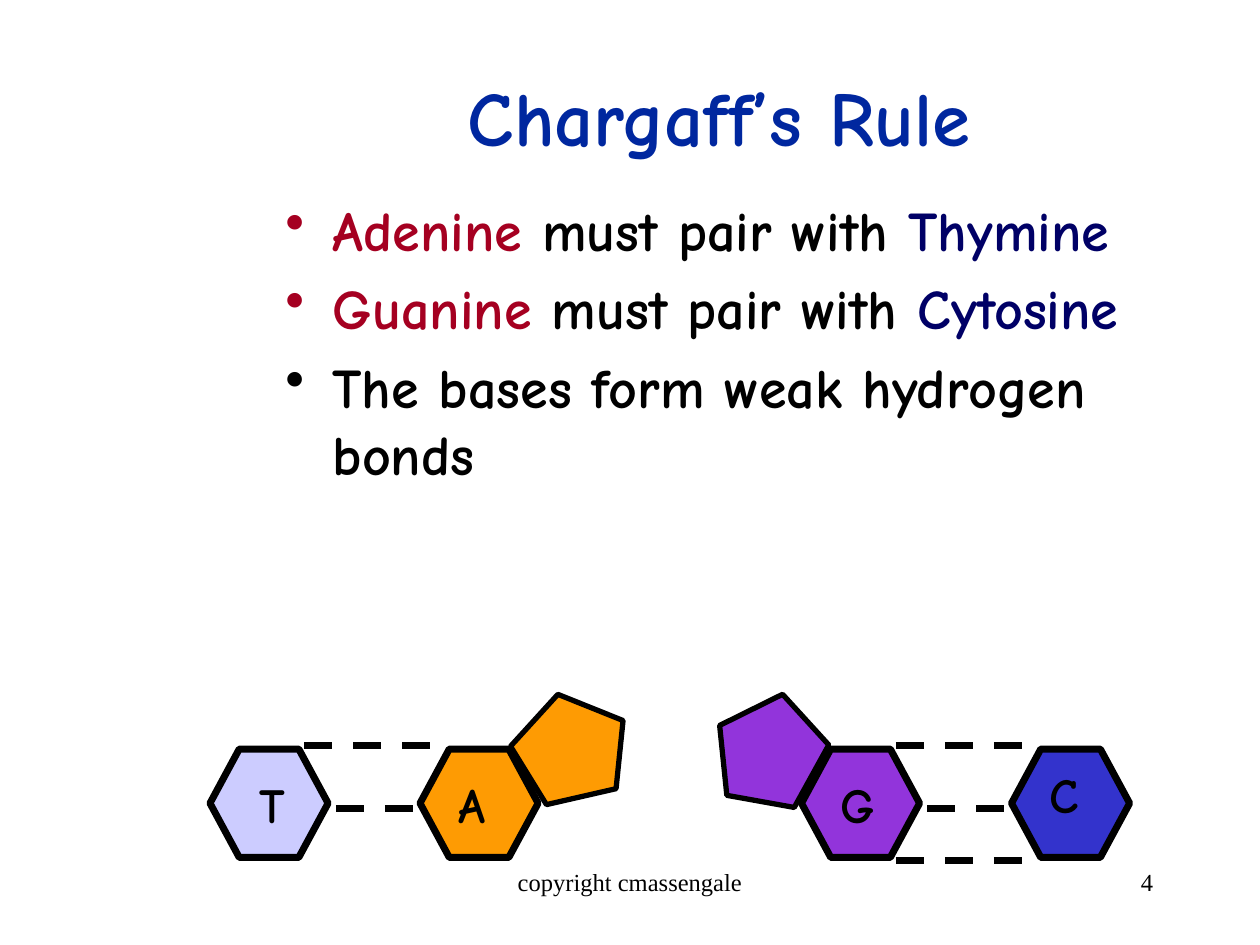
import dataclasses
import typing

import lxml.etree
import pptx
import pptx.dml.color
import pptx.enum.dml
import pptx.enum.shapes
import pptx.enum.text
import pptx.oxml.ns
import pptx.util

Pt = pptx.util.Pt
ALIGN = pptx.enum.text.PP_ALIGN
ANCHOR = pptx.enum.text.MSO_ANCHOR
SHAPES = pptx.enum.shapes.MSO_SHAPE


@dataclasses.dataclass(frozen=True)
class Theme:
    display_font: str = "Comic Neue"
    footer_font: str = "Times New Roman"
    title_size: int = 44
    body_size: int = 32
    letter_size: int = 28
    footer_size: int = 14
    black: str = "000000"
    title: str = "00279F"
    purine: str = "A50021"
    pyrimidine: str = "000066"
    thymine: str = "CCCCFF"
    adenine: str = "FE9B03"
    guanine: str = "9234DB"
    cytosine: str = "3333CC"


THEME = Theme()


class Box(typing.NamedTuple):
    left: float
    top: float
    width: float
    height: float


class Base(typing.NamedTuple):
    letter: str
    color: str
    left: float
    letter_box: Box


class Ring(typing.NamedTuple):
    color: str
    box: Box
    rotation: float


class Bond(typing.NamedTuple):
    start: float
    end: float
    y: float


class BasePair(typing.NamedTuple):
    bases: list[Base]
    bonds: list[Bond]
    ring: Ring


HEXAGON_TOP, HEXAGON_WIDTH, HEXAGON_HEIGHT = 428, 67.5, 62
UPPER_BOND, MIDDLE_BOND, LOWER_BOND = 426, 462, 492

BASE_PAIRS = [
    BasePair(
        [Base("G", THEME.guanine, 458, Box(473, 439, 33, 40)),
         Base("C", THEME.cytosine, 578, Box(592.5, 433.5, 32, 40))],
        [Bond(512, 592, UPPER_BOND), Bond(530, 574, MIDDLE_BOND),
         Bond(512, 592, LOWER_BOND)],
        Ring(THEME.guanine, Box(404.5, 399, 66, 60), 298.9)),
    BasePair(
        [Base("A", THEME.adenine, 240, Box(255, 439, 34.5, 40)),
         Base("T", THEME.thymine, 120, Box(141, 439, 34, 40))],
        [Bond(192, 242, MIDDLE_BOND), Bond(174, 254, UPPER_BOND)],
        Ring(THEME.adenine, Box(292.5, 396, 66, 60), 347.1)),
]

RULES = [
    [("Adenine ", THEME.purine), ("must pair with ", THEME.black),
     ("Thymine", THEME.pyrimidine)],
    [("Guanine", THEME.purine), (" must pair with ", THEME.black),
     ("Cytosine", THEME.pyrimidine)],
    [("The bases form weak hydrogen bonds", THEME.black)],
]


def rgb(color: str) -> pptx.dml.color.RGBColor:
    return pptx.dml.color.RGBColor.from_string(color)


def style_font(font, name: str, size: float, bold: bool) -> None:
    font.name, font.size, font.bold = name, Pt(size), bold


def add_frame(shapes, box: Box, wrap: bool = True):
    frame = shapes.add_textbox(*map(Pt, box)).text_frame
    frame.word_wrap = wrap
    return frame


def add_label(shapes, box: Box, text: str, font: str, size: float, color: str,
              bold: bool = True, align=ALIGN.LEFT, anchor=ANCHOR.TOP,
              wrap: bool = True) -> None:
    frame = add_frame(shapes, box, wrap)
    frame.vertical_anchor = anchor
    label = frame.paragraphs[0]
    label.text, label.alignment = text, align
    style_font(label.font, font, size, bold)
    label.font.color.rgb = rgb(color)


def add_rules(shapes, box: Box) -> None:
    frame = add_frame(shapes, box)
    for index, rule in enumerate(RULES):
        paragraph = frame.add_paragraph() if index else frame.paragraphs[0]
        if index:
            paragraph.space_before = Pt(6.4)
        properties = paragraph._p.get_or_add_pPr()
        properties.set("marL", str(Pt(27)))
        properties.set("indent", str(Pt(-27)))
        bullet = lxml.etree.SubElement(properties, pptx.oxml.ns.qn("a:buChar"))
        bullet.set("char", "•")
        style_font(paragraph.font, THEME.display_font, THEME.body_size, True)
        for text, color in rule:
            run = paragraph.add_run()
            run.text = text
            run.font.color.rgb = rgb(color)


def add_polygon(shapes, kind, box: Box, color: str, line_width: float):
    polygon = shapes.add_shape(kind, *map(Pt, box))
    polygon.shadow.inherit = False
    polygon.fill.solid()
    polygon.fill.fore_color.rgb = rgb(color)
    polygon.line.color.rgb = rgb(THEME.black)
    polygon.line.width = Pt(line_width)
    return polygon


def add_bond(shapes, bond: Bond) -> None:
    dashes = shapes.add_connector(
        pptx.enum.shapes.MSO_CONNECTOR.STRAIGHT,
        Pt(bond.start), Pt(bond.y), Pt(bond.end), Pt(bond.y))
    dashes.line.color.rgb = rgb(THEME.black)
    dashes.line.width = Pt(4)
    dashes.line.dash_style = pptx.enum.dml.MSO_LINE.DASH
    lxml.etree.SubElement(dashes._element.spPr, pptx.oxml.ns.qn("a:effectLst"))


def add_base_pair(slide, pair: BasePair) -> None:
    shapes = slide.shapes.add_group_shape().shapes
    for base in pair.bases:
        box = Box(base.left, HEXAGON_TOP, HEXAGON_WIDTH, HEXAGON_HEIGHT)
        hexagon = add_polygon(shapes, SHAPES.HEXAGON, box, base.color, 4)
        hexagon.adjustments[0] = 0.27
    for bond in pair.bonds:
        add_bond(shapes, bond)
    for base in pair.bases:
        add_label(shapes, base.letter_box, base.letter, THEME.display_font,
                  THEME.letter_size, THEME.black, wrap=False)
    ring = add_polygon(shapes, SHAPES.REGULAR_PENTAGON, pair.ring.box,
                       pair.ring.color, 3)
    ring.rotation = pair.ring.rotation


def main() -> None:
    presentation = pptx.Presentation()
    presentation.slide_width, presentation.slide_height = Pt(720), Pt(540)
    slide = presentation.slides.add_slide(presentation.slide_layouts[6])
    add_label(slide.shapes, Box(156, 30, 510, 72), "Chargaff’s Rule",
              THEME.display_font, THEME.title_size, THEME.title,
              align=ALIGN.CENTER, anchor=ANCHOR.MIDDLE)
    add_rules(slide.shapes, Box(156, 108, 510, 372))
    for pair in BASE_PAIRS:
        add_base_pair(slide, pair)
    for box, text, align in [
            (Box(246, 492, 228, 36), "copyright cmassengale", ALIGN.CENTER),
            (Box(516, 492, 150, 36), "4", ALIGN.RIGHT)]:
        add_label(slide.shapes, box, text, THEME.footer_font,
                  THEME.footer_size, THEME.black, bold=False, align=align)
    presentation.save("out.pptx")


if __name__ == "__main__":
    main()
